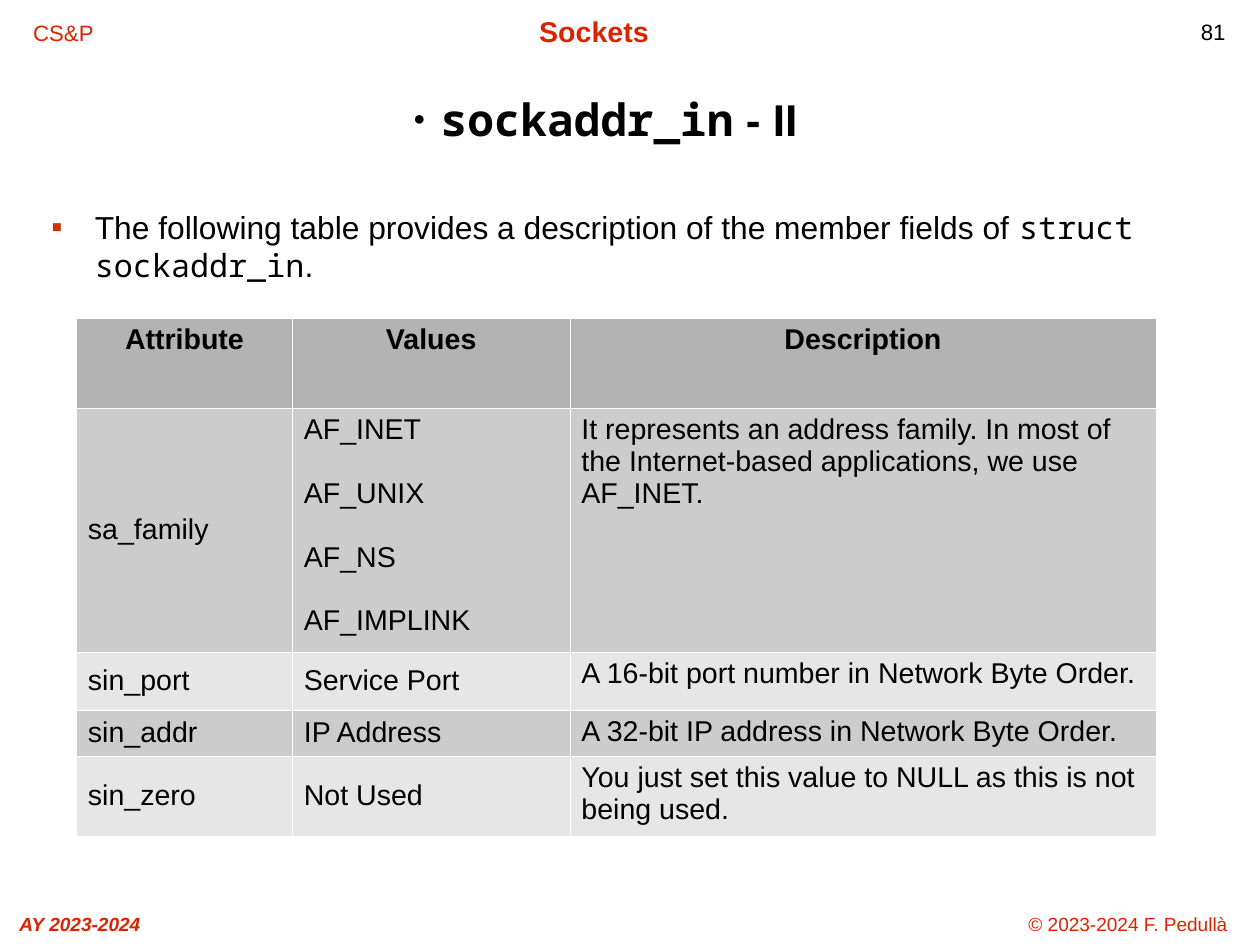
from dataclasses import dataclass

from lxml.etree import SubElement
from pptx import Presentation
from pptx.dml.color import RGBColor
from pptx.enum.text import MSO_ANCHOR as Anchor, MSO_AUTO_SIZE as AutoSize, PP_ALIGN as Align
from pptx.oxml.ns import qn
from pptx.util import Pt

PX = 9144  # EMU in one px, at 100 px to the inch
SANS, MONO = "Arial", "Noto Sans Mono"
RED, BLACK, WHITE = "DC2300", "000000", "FFFFFF"
HEADER_FILL, DARK_FILL, LIGHT_FILL = "B3B3B3", "CCCCCC", "E6E6E6"


@dataclass
class Label:
    text: str
    left: int
    top: int
    width: int
    height: int
    size: int
    color: str = RED
    bold: bool = False
    italic: bool = False


@dataclass
class Field:
    attribute: str
    values: list[str]
    description: str
    height: int
    fill: str
    values_anchor: Anchor = Anchor.MIDDLE


LABELS = [
    Label("81", 1021, 11, 82, 39, 14, BLACK),
    Label("© 2023-2024 F. Pedullà", 873, 793, 229, 33, 12),
    Label("AY 2023-2024", 0, 793, 140, 33, 12, bold=True, italic=True),
    Label("Sockets", 370, 7, 300, 33, 18, bold=True),
    Label("CS&P", 13, 12, 85, 33, 14),
]

HEADINGS = ["Attribute", "Values", "Description"]
HEADER_HEIGHT = 79
COLUMN_WIDTHS = [189, 243, 513]
FIELDS = [
    Field("sa_family", ["AF_INET", "AF_UNIX", "AF_NS", "AF_IMPLINK"],
          "It represents an address family. In most of the Internet-based "
          "applications, we use AF_INET.", 79, DARK_FILL, Anchor.TOP),
    Field("sin_port", ["Service Port"],
          "A 16-bit port number in Network Byte Order.", 51, LIGHT_FILL),
    Field("sin_addr", ["IP Address"],
          "A 32-bit IP address in Network Byte Order.", 33, DARK_FILL),
    Field("sin_zero", ["Not Used"],
          "You just set this value to NULL as this is not being used.", 54, LIGHT_FILL),
]


def rgb(color: str) -> RGBColor:
    return RGBColor.from_string(color)


def add_span(para, text: str, *, size: int, font: str = SANS, color: str = BLACK,
             bold: bool = False, italic: bool = False) -> None:
    span = para.add_run()
    span.text = text
    span.font.name, span.font.size = font, Pt(size)
    span.font.bold, span.font.italic = bold, italic
    span.font.color.rgb = rgb(color)


def add_bullet(para, char: str, *, color: str, indent: int, percent: int = 100) -> None:
    props = para._p.get_or_add_pPr()
    props.set("marL", str(indent * PX))
    props.set("indent", str(-indent * PX))
    SubElement(SubElement(props, qn("a:buClr")), qn("a:srgbClr")).set("val", color)
    SubElement(props, qn("a:buSzPct")).set("val", str(percent * 1000))
    SubElement(props, qn("a:buFont")).set("typeface", SANS)
    SubElement(props, qn("a:buChar")).set("char", char)


def place(shape, left: int, top: int, width: int, height: int) -> None:
    shape.left, shape.top = left * PX, top * PX
    shape.width, shape.height = width * PX, height * PX


def add_label(page, label: Label) -> None:
    box = page.shapes.add_textbox(0, 0, 0, 0)
    place(box, label.left, label.top, label.width, label.height)
    box.text_frame.word_wrap = True
    para = box.text_frame.paragraphs[0]
    para.alignment, para.line_spacing = Align.CENTER, 1.01
    add_span(para, label.text, size=label.size, color=label.color,
             bold=label.bold, italic=label.italic)


def start_placeholder(box, align: Align, anchor: Anchor):
    frame = box.text_frame
    frame.auto_size, frame.word_wrap = AutoSize.NONE, True
    frame.vertical_anchor = anchor
    para = frame.paragraphs[0]
    para.alignment, para.space_before = align, Pt(0)
    return para


def fill_cell(cell, lines: list[str], *, fill: str, anchor: Anchor = Anchor.TOP,
              align: Align = Align.LEFT, bold: bool = False) -> None:
    props = cell._tc.get_or_add_tcPr()
    for side in ("lnL", "lnR", "lnT", "lnB"):
        border = SubElement(props, qn(f"a:{side}"), w=str(Pt(0.06)))
        SubElement(SubElement(border, qn("a:solidFill")), qn("a:srgbClr")).set("val", WHITE)
    cell.fill.solid()
    cell.fill.fore_color.rgb = rgb(fill)
    cell.vertical_anchor = anchor
    for index, line in enumerate(lines):
        para = cell.text_frame.add_paragraph() if index else cell.text_frame.paragraphs[0]
        para.alignment = align
        para.space_before = Pt(20 if index else 0)
        add_span(para, line, size=18, bold=bold)


def add_field_table(page) -> None:
    heights = [HEADER_HEIGHT] + [field.height for field in FIELDS]
    table = page.shapes.add_table(
        len(heights), len(HEADINGS), 67 * PX, 278 * PX,
        sum(COLUMN_WIDTHS) * PX, sum(heights) * PX).table
    table.horz_banding = False
    for column, width in zip(table.columns, COLUMN_WIDTHS):
        column.width = width * PX
    for row, height in zip(table.rows, heights):
        row.height = height * PX
    for column, heading in enumerate(HEADINGS):
        fill_cell(table.cell(0, column), [heading], fill=HEADER_FILL,
                  align=Align.CENTER, bold=True)
    for row, field in enumerate(FIELDS, 1):
        fill_cell(table.cell(row, 0), [field.attribute], fill=field.fill, anchor=Anchor.MIDDLE)
        fill_cell(table.cell(row, 1), field.values, fill=field.fill, anchor=field.values_anchor)
        fill_cell(table.cell(row, 2), [field.description], fill=field.fill)


def main() -> None:
    deck = Presentation()
    deck.slide_width, deck.slide_height = 1103 * PX, 826 * PX
    page = deck.slides.add_slide(deck.slide_layouts[1])

    # Header and footer
    for label in LABELS:
        add_label(page, label)

    # Title
    title = page.shapes.title
    place(title, 43, 49, 974, 110)
    para = start_placeholder(title, Align.CENTER, Anchor.MIDDLE)
    add_bullet(para, "●", color=BLACK, indent=24, percent=45)
    add_span(para, "sockaddr_in", size=28, font=MONO, bold=True)
    add_span(para, " - II", size=28, bold=True)

    # Introduction
    body = page.placeholders[1]
    place(body, 35, 177, 989, 571)
    para = start_placeholder(body, Align.LEFT, Anchor.TOP)
    add_bullet(para, "▪", color="CC3300", indent=38)
    add_span(para, "The following table provides a description of the member fields of ", size=20)
    add_span(para, "struct sockaddr_in", size=20, font=MONO)
    add_span(para, ".", size=20)

    # Table of member fields
    add_field_table(page)

    deck.save("out.pptx")


if __name__ == "__main__":
    main()
